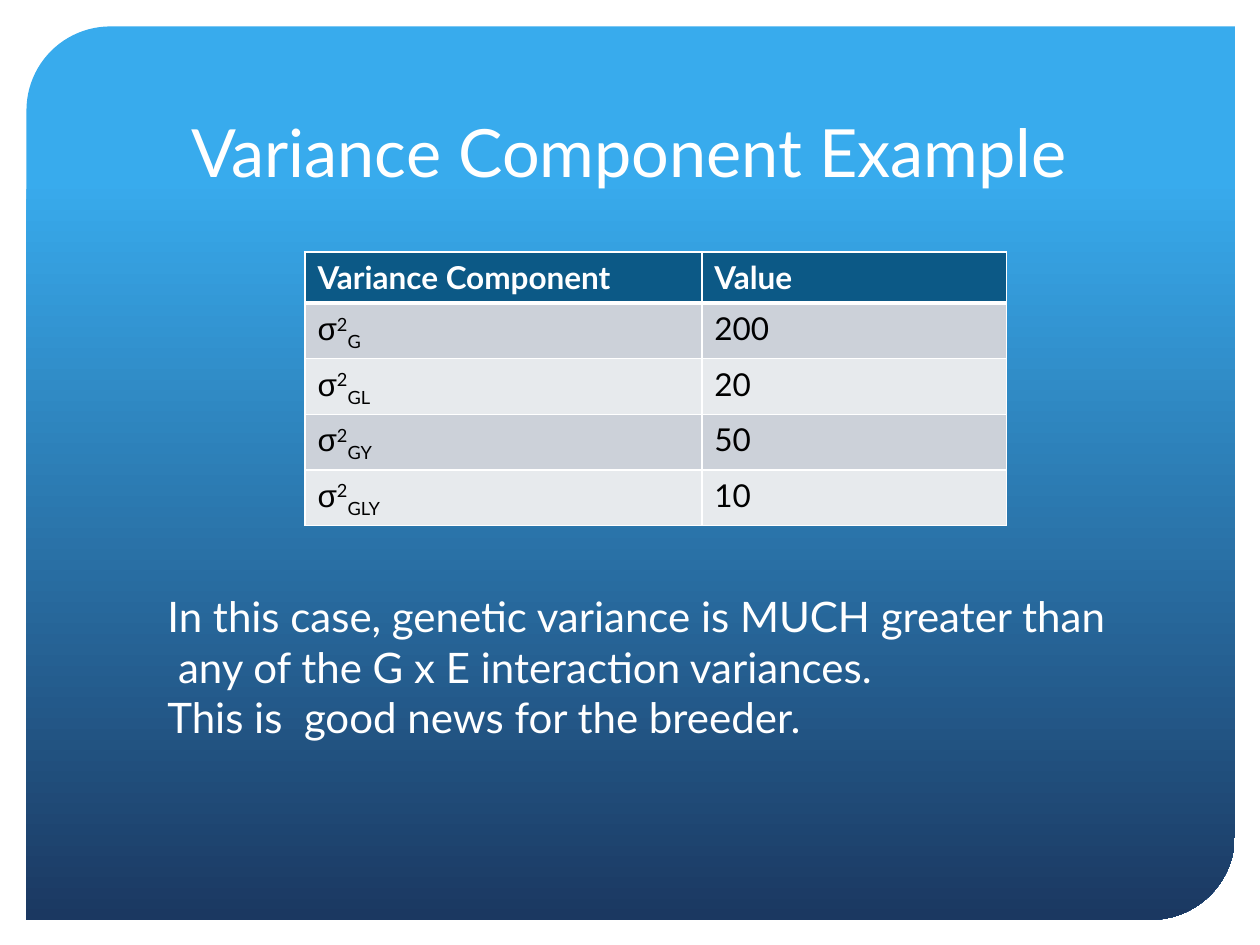
"""Build the slide with the variance component example."""
from lxml import etree
from pptx import Presentation
from pptx import util as u
from pptx.dml.color import RGBColor
from pptx.enum import shapes, text
from pptx.oxml import ns

WHITE = RGBColor(0xFF, 0xFF, 0xFF)
BLACK = RGBColor(0x00, 0x00, 0x00)
SKY = RGBColor(0x38, 0xAB, 0xED)
NAVY = RGBColor(0x1B, 0x38, 0x61)
HEADER = RGBColor(0x0C, 0x59, 0x86)
BANDS = (RGBColor(0xCC, 0xD1, 0xD9), RGBColor(0xE7, 0xEA, 0xED))
COMPONENTS = (("G", "200"), ("GL", "20"), ("GY", "50"), ("GLY", "10"))


def add_run(paragraph, words, size=18, color=WHITE, font="Lato", bold=False, baseline=0):
    run = paragraph.add_run()
    run.text = words
    run.font.size = u.Pt(size)
    run.font.name = font
    run.font.bold = bold
    run.font.color.rgb = color
    if baseline:
        run.font._element.set("baseline", str(baseline * 1000))


class SlideBuilder:
    def __init__(self, slide, font="Lato"):
        self.slide = slide
        self.font = font

    def panel(self, box, colors, rounding):
        shape = self.slide.shapes.add_shape(
            shapes.MSO_SHAPE.ROUND_2_DIAG_RECTANGLE, *map(u.Inches, box))
        shape.shadow.inherit = False
        shape.line.fill.background()
        shape.adjustments[0] = rounding
        shape.adjustments[1] = 0
        shape.fill.gradient()
        shape.fill.gradient_angle = 270
        for stop, position, color in zip(shape.fill.gradient_stops, (0.17, 1), colors):
            stop.position = position
            stop.color.rgb = color

    def text_box(self, box, lines, size, wrap=True, align=text.PP_ALIGN.LEFT,
                 anchor=text.MSO_ANCHOR.TOP):
        frame = self.slide.shapes.add_textbox(*map(u.Inches, box)).text_frame
        frame.word_wrap = wrap
        frame.vertical_anchor = anchor
        for index, line in enumerate(lines):
            paragraph = frame.add_paragraph() if index else frame.paragraphs[0]
            paragraph.alignment = align
            add_run(paragraph, line, size=size, font=self.font)

    def borders(self, cell, top, bottom):
        properties = cell._tc.get_or_add_tcPr()
        widths = {"lnL": 1, "lnR": 1, "lnT": top, "lnB": bottom}
        for index, (side, width) in enumerate(widths.items()):
            line = etree.Element(ns.qn(f"a:{side}"), w=str(u.Pt(width)))
            fill = etree.SubElement(line, ns.qn("a:solidFill"))
            etree.SubElement(fill, ns.qn("a:srgbClr"), val=str(WHITE))
            properties.insert(index, line)

    def table(self, box, widths, headings, components):
        table = self.slide.shapes.add_table(
            len(components) + 1, len(widths), *map(u.Inches, box)).table
        for column, width in zip(table.columns, widths):
            column.width = u.Inches(width)
        for index, row in enumerate(table.rows):
            for cell in row.cells:
                cell.fill.solid()
                cell.fill.fore_color.rgb = BANDS[(index - 1) % 2] if index else HEADER
                self.borders(cell, top=3 if index == 1 else 1, bottom=1 if index else 3)
        for column, heading in enumerate(headings):
            add_run(table.cell(0, column).text_frame.paragraphs[0], heading,
                    font=self.font, bold=True)
        for index, (subscript, value) in enumerate(components, start=1):
            symbol, number = (table.cell(index, column).text_frame.paragraphs[0]
                              for column in range(2))
            add_run(symbol, "σ", color=BLACK, font="Arial")
            add_run(symbol, "2", color=BLACK, font=self.font, baseline=30)
            add_run(symbol, subscript, color=BLACK, font=self.font, baseline=-25)
            add_run(number, value, color=BLACK, font=self.font)


def main():
    presentation = Presentation()
    presentation.slide_width = u.Inches(10)
    presentation.slide_height = u.Inches(7.5)
    builder = SlideBuilder(presentation.slides.add_slide(presentation.slide_layouts[6]))
    builder.panel((0.21, 0.21, 9.59, 7.09), (SKY, NAVY), rounding=0.094)
    builder.text_box((0.85, 0.42, 8.29, 1.14), ["Variance Component Example"], size=38,
                     align=text.PP_ALIGN.CENTER, anchor=text.MSO_ANCHOR.BOTTOM)
    builder.table((2.42, 2, 5.57, 2.03), (3.15, 2.42),
                  ("Variance Component", "Value"), COMPONENTS)
    builder.text_box((1.23, 4.64, 7.92, 1.31), [
        "In this case, genetic variance is MUCH greater than",
        " any of the G x E interaction variances.",
        "This is  good news for the breeder.",
    ], size=24, wrap=False)
    presentation.save("out.pptx")


if __name__ == "__main__":
    main()
